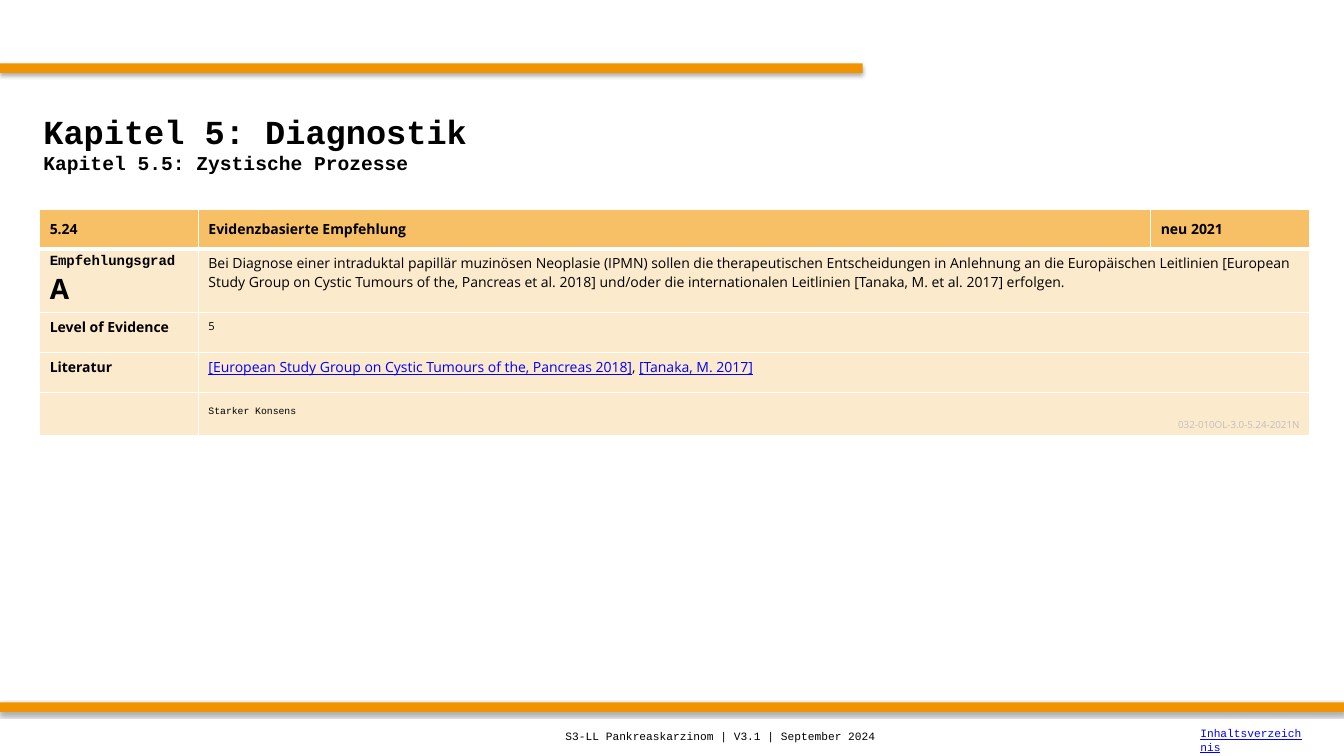
from dataclasses import dataclass

from lxml import etree
from pptx import Presentation
from pptx.dml.color import RGBColor
from pptx.enum.text import MSO_ANCHOR, MSO_AUTO_SIZE, PP_ALIGN
from pptx.oxml import parse_xml
from pptx.oxml.ns import qn
from pptx.util import Cm, Pt

LEFT, RIGHT = PP_ALIGN.LEFT, PP_ALIGN.RIGHT
TOP, MIDDLE, BOTTOM = MSO_ANCHOR.TOP, MSO_ANCHOR.MIDDLE, MSO_ANCHOR.BOTTOM
FIXED_SIZE = MSO_AUTO_SIZE.NONE
TITLE_ONLY = 5
DRAWING_NS = "http://schemas.openxmlformats.org/drawingml/2006/main"


@dataclass(frozen=True)
class Theme:
    mono: str = "Courier New"
    sans: str = "Open Sans"
    black: str = "000000"
    white: str = "FFFFFF"
    orange: str = "F29400"
    header: str = "F7BF66"
    body: str = "FCEACC"
    link: str = "0000FF"
    muted: str = "BFBFBF"
    title: int = 24
    grade: int = 20
    subtitle: int = 14
    text: int = 10
    small: int = 8
    tiny: int = 7


THEME = Theme()


@dataclass(frozen=True)
class Span:
    text: str
    size: int = THEME.text
    family: str = THEME.sans
    color: str = THEME.black
    bold: bool = False
    underline: bool = False


@dataclass(frozen=True)
class Line:
    spans: tuple[Span, ...]
    align: PP_ALIGN = LEFT


@dataclass(frozen=True)
class Entry:
    lines: tuple[Line, ...] = ()
    anchor: MSO_ANCHOR = TOP


@dataclass(frozen=True)
class Row:
    height: float
    entries: tuple[Entry, ...]
    fill: str = THEME.body
    bottom_border: int = 1


@dataclass(frozen=True)
class Box:
    left: float
    top: float
    width: float
    height: float

    def lengths(self) -> tuple[Cm, ...]:
        return Cm(self.left), Cm(self.top), Cm(self.width), Cm(self.height)


@dataclass(frozen=True)
class FooterText:
    box: Box
    span: Span


def bold_line(text: str, size: int = THEME.text, family: str = THEME.sans) -> Line:
    return Line((Span(text, size, family, bold=True),))


def label(text: str, anchor: MSO_ANCHOR = TOP) -> Entry:
    return Entry((bold_line(text),), anchor)


# Slide content
SLIDE_WIDTH, SLIDE_HEIGHT = 33.87, 19.05
BARS = (Box(0, 1.6, 21.74, 0.24), Box(0, 17.7, SLIDE_WIDTH, 0.24))
TITLE_BOX = Box(0.84, 2.12, 32.18, 2.96)
TITLE_LINES = (
    bold_line("Kapitel 5: Diagnostik", THEME.title, THEME.mono),
    bold_line("Kapitel 5.5: Zystische Prozesse", THEME.subtitle, THEME.mono),
)
TABLE_LEFT, TABLE_TOP = 1, 5.27
COLUMN_WIDTHS = (4, 24, 4)
RECOMMENDATION = (
    "Bei Diagnose einer intraduktal papillär muzinösen Neoplasie (IPMN) sollen die "
    "therapeutischen Entscheidungen in Anlehnung an die Europäischen Leitlinien "
    "[European Study Group on Cystic Tumours of the, Pancreas et al. 2018] und/oder "
    "die internationalen Leitlinien [Tanaka, M. et al. 2017] erfolgen."
)
LITERATURE = Line((
    Span("[European Study Group on Cystic Tumours of the, Pancreas 2018]",
         color=THEME.link, underline=True),
    Span(", "),
    Span("[Tanaka, M. 2017]", color=THEME.link, underline=True),
))
CONSENSUS = (
    Line((Span("Starker Konsens", THEME.tiny, THEME.mono),)),
    Line((Span("032-010OL-3.0-5.24-2021N", THEME.tiny, color=THEME.muted),), RIGHT),
)
ROWS = (
    Row(1, (label("5.24", MIDDLE), label("Evidenzbasierte Empfehlung", MIDDLE),
            label("neu 2021", MIDDLE)), THEME.header, 3),
    Row(1.6, (Entry((bold_line("Empfehlungsgrad", family=THEME.mono),
                     bold_line("A", THEME.grade))),
              Entry((Line((Span(RECOMMENDATION),)),)))),
    Row(1, (label("Level of Evidence"), Entry((Line((Span("5", THEME.small),)),)))),
    Row(1, (label("Literatur"), Entry((LITERATURE,)))),
    Row(1.1, (Entry(), Entry(CONSENSUS, BOTTOM))),
)
FOOTER = (
    FooterText(Box(14, 18.06, 14, 0.99),
               Span("S3-LL Pankreaskarzinom | V3.1 | September 2024",
                    THEME.small, THEME.mono)),
    FooterText(Box(30, 18.15, 3.1, 0.99),
               Span("Inhaltsverzeichnis", THEME.small, THEME.mono, THEME.link,
                    underline=True)),
)


def write_lines(frame, lines: tuple[Line, ...]) -> None:
    for index, line in enumerate(lines):
        paragraph = frame.paragraphs[0] if index == 0 else frame.add_paragraph()
        paragraph.alignment = line.align
        for span in line.spans:
            run = paragraph.add_run()
            run.text = span.text
            formats = {"name": span.family, "size": Pt(span.size),
                       "bold": span.bold, "underline": span.underline}
            for attribute, value in formats.items():
                setattr(run.font, attribute, value)
            run.font.color.rgb = RGBColor.from_string(span.color)


def draw_bar(slide, box: Box) -> None:
    bar = slide.shapes.add_shape(1, *box.lengths())
    bar.fill.solid()
    bar.fill.fore_color.rgb = RGBColor.from_string(THEME.orange)
    bar.line.fill.background()
    bar.shadow.inherit = False
    effects = bar._element.spPr.find(qn("a:effectLst"))
    effects.append(parse_xml(
        f'<a:outerShdw xmlns:a="{DRAWING_NS}" blurRad="{Pt(3.1)}" dist="{Pt(1.8)}" '
        f'dir="5400000" rotWithShape="0"><a:srgbClr val="{THEME.black}">'
        '<a:alpha val="35000"/></a:srgbClr></a:outerShdw>'))


def format_frame(frame) -> None:
    formats = {"word_wrap": True, "auto_size": FIXED_SIZE, "vertical_anchor": MIDDLE}
    for attribute, value in formats.items():
        setattr(frame, attribute, value)


def draw_title(slide) -> None:
    title = slide.shapes.title
    for attribute, value in zip(("left", "top", "width", "height"), TITLE_BOX.lengths()):
        setattr(title, attribute, value)
    format_frame(title.text_frame)
    write_lines(title.text_frame, TITLE_LINES)


def format_cell(cell, row: Row) -> None:
    properties = cell._tc.get_or_add_tcPr()
    borders = {"lnL": 1, "lnR": 1, "lnT": 1, "lnB": row.bottom_border}
    for side, width in borders.items():
        border = etree.SubElement(properties, qn(f"a:{side}"), w=str(Pt(width)))
        paint = etree.SubElement(border, qn("a:solidFill"))
        etree.SubElement(paint, qn("a:srgbClr"), val=THEME.white)
    cell.fill.solid()
    cell.fill.fore_color.rgb = RGBColor.from_string(row.fill)


def draw_table(slide) -> None:
    box = Box(TABLE_LEFT, TABLE_TOP, sum(COLUMN_WIDTHS), sum(row.height for row in ROWS))
    table = slide.shapes.add_table(len(ROWS), len(COLUMN_WIDTHS), *box.lengths()).table
    table.horz_banding = False
    for column, width in zip(table.columns, COLUMN_WIDTHS):
        column.width = Cm(width)
    for index, row in enumerate(ROWS):
        table.rows[index].height = Cm(row.height)
        for cell in table.rows[index].cells:
            format_cell(cell, row)
        # A row with fewer entries spans its last one to the right edge
        if len(row.entries) < len(COLUMN_WIDTHS):
            last = table.cell(index, len(COLUMN_WIDTHS) - 1)
            table.cell(index, len(row.entries) - 1).merge(last)
        for column_index, entry in enumerate(row.entries):
            cell = table.cell(index, column_index)
            cell.vertical_anchor = entry.anchor
            write_lines(cell.text_frame, entry.lines)


def draw_footer(slide, footer: FooterText) -> None:
    frame = slide.shapes.add_textbox(*footer.box.lengths()).text_frame
    format_frame(frame)
    write_lines(frame, (Line((footer.span,)),))


def main() -> None:
    deck = Presentation()
    deck.slide_width, deck.slide_height = Cm(SLIDE_WIDTH), Cm(SLIDE_HEIGHT)
    slide = deck.slides.add_slide(deck.slide_layouts[TITLE_ONLY])
    for bar in BARS:
        draw_bar(slide, bar)
    draw_title(slide)
    draw_table(slide)
    for footer in FOOTER:
        draw_footer(slide, footer)
    deck.save("out.pptx")


if __name__ == "__main__":
    main()
